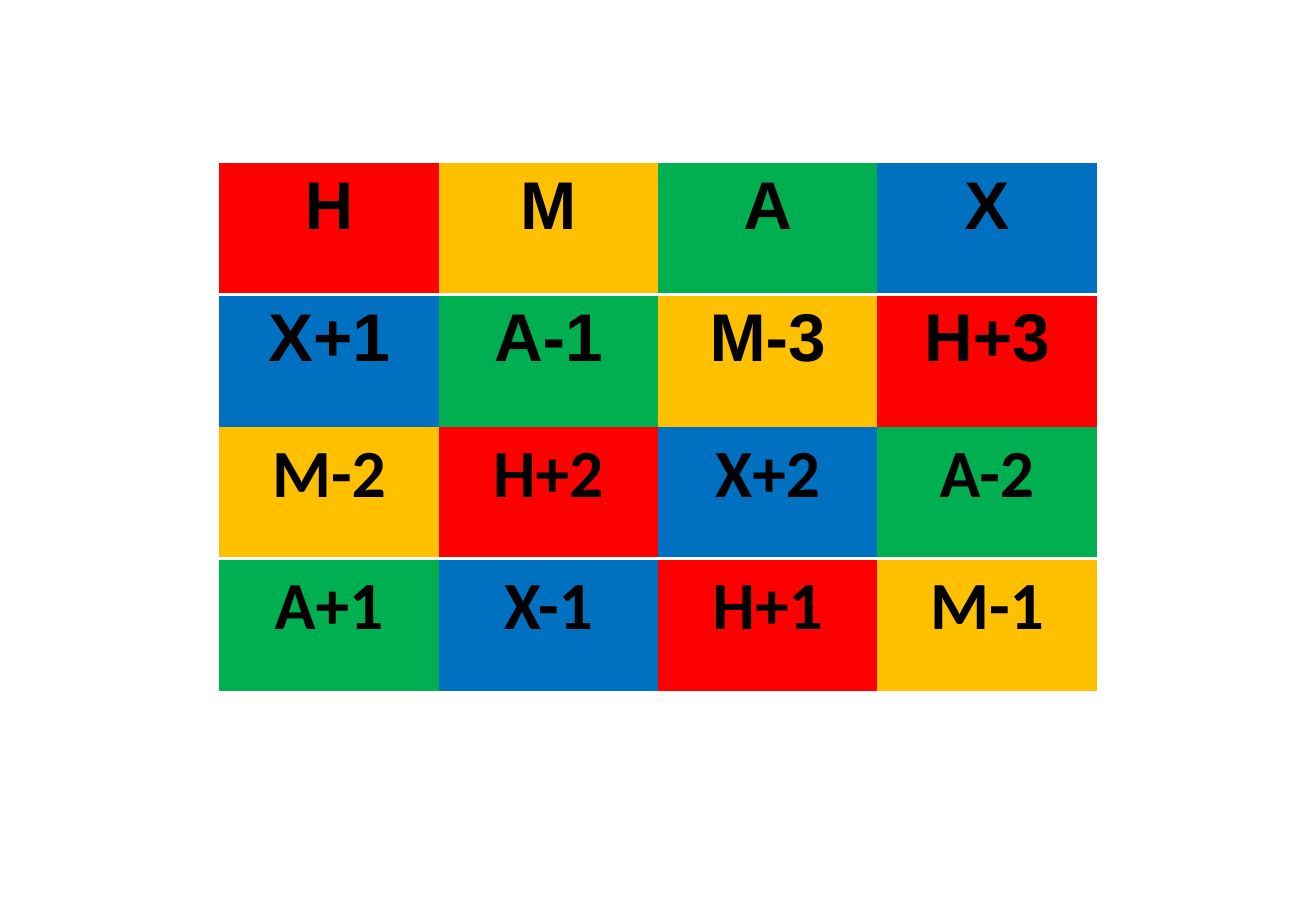
import dataclasses

import lxml.etree
import pptx
import pptx.dml.color
import pptx.enum.text
import pptx.oxml.ns
import pptx.presentation
import pptx.slide
import pptx.table
import pptx.util

Pt = pptx.util.Pt


@dataclasses.dataclass(frozen=True)
class Theme:
    red: str = "FF0000"
    gold: str = "FFC000"
    green: str = "00B050"
    blue: str = "0070C0"
    ink: str = "000000"
    rule: str = "FFFFFF"
    size: float = 40
    width: float = 2


@dataclasses.dataclass(frozen=True)
class Block:
    font: str
    rows: tuple[tuple[str, ...], ...]


THEME = Theme()

# Each letter has its own colour
FILLS = {"Η": THEME.red, "M": THEME.gold, "Α": THEME.green, "Χ": THEME.blue}

# Two tables, stacked
BLOCKS = (
    Block("Arial", (("Η", "M", "Α", "Χ"),
                    ("Χ+1", "Α-1", "M-3", "Η+3"))),
    Block("Calibri", (("M-2", "Η+2", "Χ+2", "Α-2"),
                      ("Α+1", "Χ-1", "Η+1", "M-1"))),
)

LEFT, TOP = 130, 96.5
CELL_W, CELL_H = 130, 78.25
PLAIN = "{2D5ABB26-0587-4C30-8999-92F81FD0307C}"  # no style, no grid


def color(code: str) -> pptx.dml.color.RGBColor:
    return pptx.dml.color.RGBColor.from_string(code)


def underline(cell: pptx.table._Cell) -> None:
    """Draw the rule along the bottom of a cell."""
    qn = pptx.oxml.ns.qn
    line = lxml.etree.Element(qn("a:lnB"), w=str(Pt(THEME.width)))
    fill = lxml.etree.SubElement(line, qn("a:solidFill"))
    lxml.etree.SubElement(fill, qn("a:srgbClr"), val=THEME.rule)
    cell._tc.get_or_add_tcPr().insert(0, line)


def write(cell: pptx.table._Cell, text: str, font: str) -> None:
    """Fill a cell by its letter and set its text."""
    cell.fill.solid()
    cell.fill.fore_color.rgb = color(FILLS[text[0]])
    cell.text_frame.text = text
    para = cell.text_frame.paragraphs[0]
    para.alignment = pptx.enum.text.PP_ALIGN.CENTER
    face = para.runs[0].font
    face.name, face.size, face.bold = font, Pt(THEME.size), True
    face.color.rgb = color(THEME.ink)


def draw(slide: pptx.slide.Slide, block: Block, top: float) -> None:
    """Add one table with a rule below its first row."""
    rows, cols = len(block.rows), len(block.rows[0])
    frame = slide.shapes.add_table(rows, cols, Pt(LEFT), Pt(top),
                                   Pt(cols * CELL_W), Pt(rows * CELL_H))
    table = frame.table
    table.first_row = table.horz_banding = False
    table._tbl.tblPr.find(pptx.oxml.ns.qn("a:tableStyleId")).text = PLAIN
    for r, row in enumerate(block.rows):
        for c, text in enumerate(row):
            cell = table.cell(r, c)
            write(cell, text, block.font)
            if r == 0:
                underline(cell)


def main() -> None:
    deck: pptx.presentation.Presentation = pptx.Presentation()
    deck.slide_width, deck.slide_height = Pt(780), Pt(540)
    slide = deck.slides.add_slide(deck.slide_layouts[6])
    top = TOP
    for block in BLOCKS:
        draw(slide, block, top)
        top += len(block.rows) * CELL_H
    deck.save("out.pptx")


if __name__ == "__main__":
    main()
